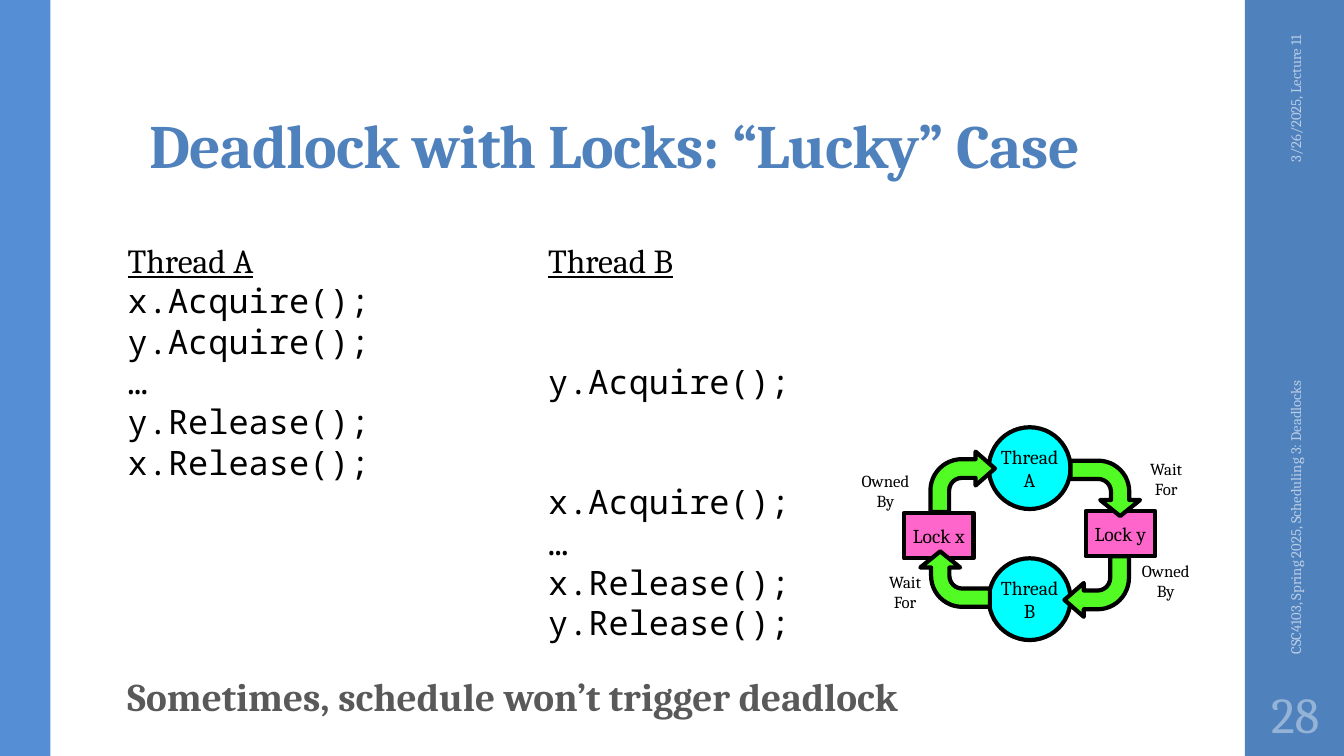
from dataclasses import dataclass

from lxml.etree import SubElement
from pptx import Presentation
from pptx.dml.color import RGBColor
from pptx.enum.shapes import MSO_SHAPE as Preset
from pptx.enum.text import MSO_ANCHOR as Anchor, MSO_AUTO_SIZE as AutoSize, PP_ALIGN as Align
from pptx.oxml.ns import qn
from pptx.util import Pt


@dataclass(frozen=True)
class Theme:
    """Fonts, type sizes and colours of the slide."""
    serif: str = "Cambria"
    mono: str = "Noto Sans Mono"
    title_size: float = 44
    number_size: float = 36
    takeaway_size: float = 28
    code_size: float = 24
    node_size: float = 14
    label_size: float = 12
    margin_size: float = 10.5
    blue: str = "4F81BD"
    light_blue: str = "558ED5"
    pale_blue: str = "B9CDE5"
    number_blue: str = "95B3D7"
    grey: str = "595959"
    black: str = "000000"
    pink: str = "FF66CC"
    cyan: str = "00FFFF"
    green: str = "53FB25"


THEME = Theme()
TITLE = "Deadlock with Locks: “Lucky” Case"
TAKEAWAY = "Sometimes, schedule won’t trigger deadlock"
DATE = "3/26/2025, Lecture 11"
COURSE = "CSC4103, Spring 2025, Scheduling 3: Deadlocks"
NUMBER = "28"
CODE_PITCH = 28.7
CODE_COLUMNS = [
    (84, 181.5, ["Thread A", "x.Acquire();", "y.Acquire();", "…", "y.Release();", "x.Release();"], {}),
    (384.3, 298, ["Thread B", "y.Acquire();", "x.Acquire();", "…", "x.Release();", "y.Release();"],
     {1: 2, 2: 2}),
]
SIDE_BARS = [(889.2, 72, THEME.blue), (0, 36, THEME.light_blue)]
LOCK_SIZE = (49.7, 32.4)
THREAD_SIZE = (58.4, 58.4)
NODES = [
    ("Lock y", Preset.RECTANGLE, (775.5, 365), LOCK_SIZE, THEME.pink),
    ("Lock x", Preset.RECTANGLE, (645.7, 366.4), LOCK_SIZE, THEME.pink),
    ("Thread\nB", Preset.OVAL, (706.3, 398.8), THREAD_SIZE, THEME.cyan),
    ("Thread\nA", Preset.OVAL, (706.3, 305.2), THREAD_SIZE, THEME.cyan),
]
WIDE_ARROW = ((46.1, 43.2), (0.31, 0.28, 0.32, 0.52))
TALL_ARROW = ((39.6, 49.7), (0.33, 0.36, 0.29, 0.56))
ARROWS = [
    ((664.6, 322.6), 0, WIDE_ARROW),
    ((769.7, 324), 90, TALL_ARROW),
    ((760.3, 397.4), 180, WIDE_ARROW),
    ((662.4, 388.8), 270, TALL_ARROW),
]
LABELS = [
    ("Wait\nFor", (812.9, 324), 40.3),
    ("Wait\nFor", (626.4, 404.6), 40.3),
    ("Owned\nBy", (805.7, 396.7), 54),
    ("Owned\nBy", (605.5, 332.6), 54),
]


def points(*lengths):
    """Turn plain numbers into point lengths."""
    return [Pt(length) for length in lengths]


def place(box, left, top, width, height):
    """Move and size a placeholder."""
    box.left, box.top, box.width, box.height = points(left, top, width, height)


def style(para, size, color, font=THEME.serif, bold=False, underline=False):
    """Format every run of a paragraph."""
    for span in para.runs:
        span.font.name, span.font.size = font, Pt(size)
        span.font.color.rgb = RGBColor.from_string(color)
        span.font.bold, span.font.underline = bold, underline


def write(box, text, size, color, align=Align.LEFT, anchor=Anchor.TOP, wrap=True, bold=False):
    """Put formatted text into a shape."""
    frame = box.text_frame
    frame.text = text
    frame.word_wrap, frame.vertical_anchor = wrap, anchor
    for para in frame.paragraphs:
        para.alignment = align
        style(para, size, color, bold=bold)
    return frame


def add_solid(shapes, preset, frame, fill, line=None):
    """Add a flat filled shape, outlined if a line colour is given."""
    shape = shapes.add_shape(preset, *points(*frame))
    shape.shadow.inherit = False
    shape.fill.solid()
    shape.fill.fore_color.rgb = RGBColor.from_string(fill)
    if line:
        shape.line.color.rgb = RGBColor.from_string(line)
        shape.line.width = Pt(3)
    else:
        shape.line.fill.background()
    return shape


def add_title(page):
    """Fill the title placeholder."""
    box = page.shapes.title
    place(box, 99.4, 23, 763.2, 110.2)
    frame = write(box, TITLE, THEME.title_size, THEME.blue, anchor=Anchor.BOTTOM, bold=True)
    frame.auto_size = AutoSize.NONE
    frame.margin_top = Pt(2.2)
    para = frame.paragraphs[0]
    para.line_spacing = 0.9
    para.runs[0]._r.get_or_add_rPr().set("spc", "-50")


def add_code(box, left, height, lines, gaps):
    """Fill a body placeholder with one thread, leaving gaps for idle steps."""
    place(box, left, 167.8, 205.2, height)
    frame = box.text_frame
    frame.text = "\n".join(lines)
    frame.auto_size = AutoSize.NONE
    for index, para in enumerate(frame.paragraphs):
        para.space_before = Pt(gaps.get(index, 0) * CODE_PITCH)
        font = THEME.mono if index else THEME.serif
        style(para, THEME.code_size, THEME.black, font, underline=index == 0)
        properties = para._p.get_or_add_pPr()
        properties.set("marL", "0")
        properties.set("indent", "0")
        SubElement(properties, qn("a:buNone"))


def add_margins(page):
    """Add the side bars and the small texts on the right one."""
    for left, width, color in SIDE_BARS:
        add_solid(page.shapes, Preset.RECTANGLE, (left, 0, width, 540), color)
    for text, frame, align in [(DATE, (850.3, 78.5, 149.8, 28.8), Align.RIGHT),
                               (COURSE, (784.1, 319, 282.2, 28.8), Align.LEFT)]:
        box = page.shapes.add_textbox(*points(*frame))
        box.rotation = 270
        write(box, text, THEME.margin_size, THEME.pale_blue, align, Anchor.MIDDLE)
    box = page.shapes.add_textbox(*points(889.2, 486, 72, 46.8))
    frame = write(box, NUMBER, THEME.number_size, THEME.number_blue, Align.CENTER, Anchor.MIDDLE)
    frame.margin_left = frame.margin_right = Pt(3.6)


def add_cycle(page):
    """Add the grouped wait-for diagram."""
    shapes = page.shapes.add_group_shape().shapes
    for text, preset, corner, size, color in NODES:
        node = add_solid(shapes, preset, corner + size, color, THEME.black)
        write(node, text, THEME.node_size, THEME.black, Align.CENTER, Anchor.MIDDLE, wrap=False)
    for corner, turn, (size, bends) in ARROWS:
        arrow = add_solid(shapes, Preset.BENT_ARROW, corner + size, THEME.green, THEME.black)
        arrow.rotation = turn
        for index, bend in enumerate(bends):
            arrow.adjustments[index] = bend
    for text, corner, width in LABELS:
        label = shapes.add_textbox(*points(*corner, width, 36.7))
        write(label, text, THEME.label_size, THEME.black, Align.CENTER, wrap=False)


def main():
    """Build the slide and save it."""
    deck = Presentation()
    deck.slide_width, deck.slide_height = points(960, 540)
    page = deck.slides.add_slide(deck.slide_layouts.get_by_name("Two Content"))
    add_margins(page)
    add_title(page)
    for index, column in enumerate(CODE_COLUMNS, start=1):
        add_code(page.placeholders[index], *column)
    takeaway = page.shapes.add_textbox(*points(84, 476.6, 609.8, 41))
    write(takeaway, TAKEAWAY, THEME.takeaway_size, THEME.grey, bold=True)
    add_cycle(page)
    deck.save("out.pptx")


if __name__ == "__main__":
    main()
